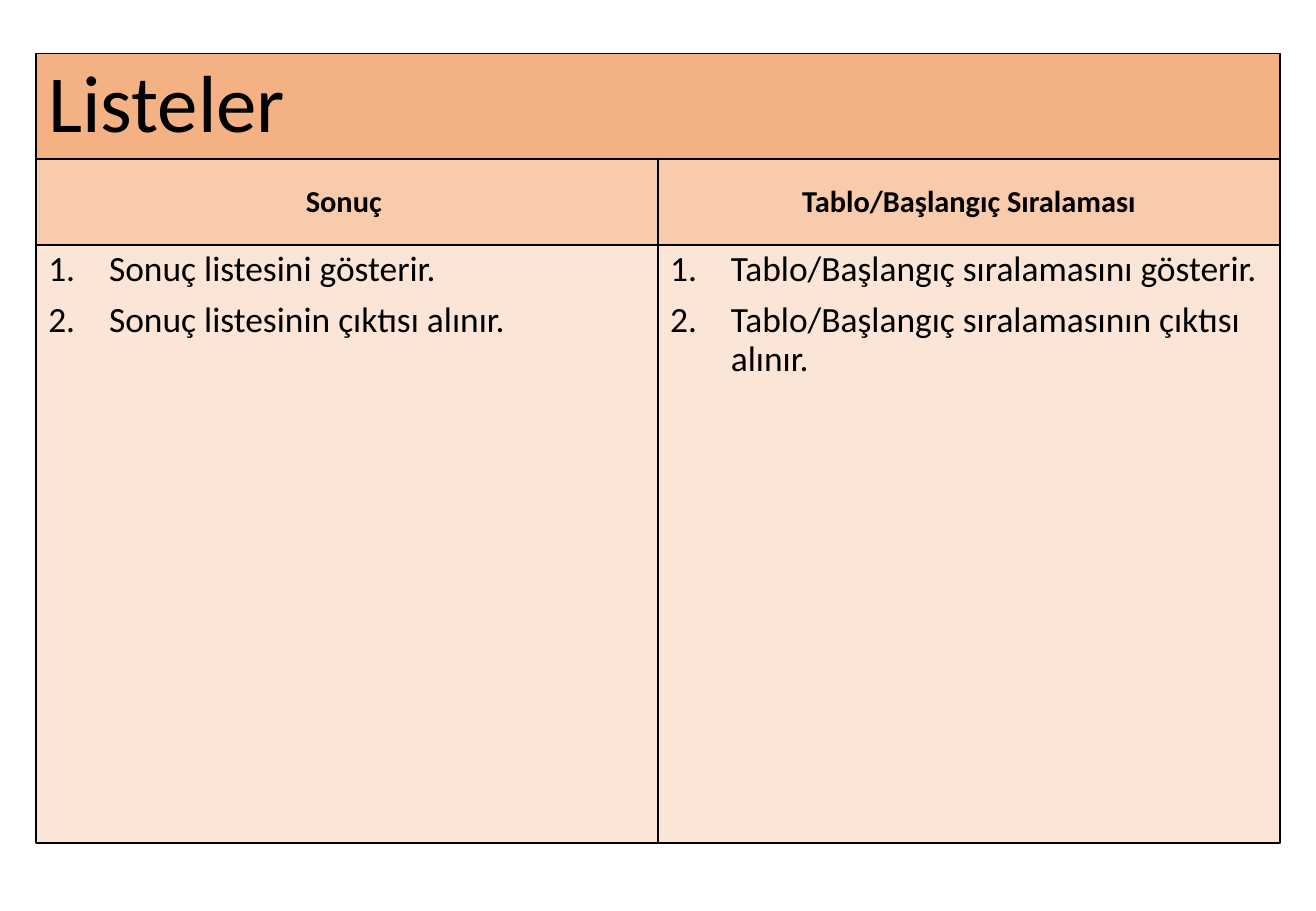
from dataclasses import dataclass

from lxml.etree import SubElement
from pptx import Presentation
from pptx.dml.color import RGBColor
from pptx.enum.shapes import MSO_SHAPE
from pptx.enum.text import MSO_ANCHOR, PP_ALIGN
from pptx.oxml.ns import qn
from pptx.util import Cm, Pt

TITLE = "Listeler"
COLUMNS = [
    ("Sonuç ", ["Sonuç listesini gösterir.", "Sonuç listesinin çıktısı alınır."]),
    (
        "Tablo/Başlangıç Sıralaması",
        [
            "Tablo/Başlangıç sıralamasını gösterir.",
            "Tablo/Başlangıç sıralamasının çıktısı alınır.",
        ],
    ),
]


@dataclass(frozen=True)
class Theme:
    font: str = "Calibri"
    ink: str = "000000"
    title_fill: str = "F4B183"
    heading_fill: str = "F8CBAD"
    list_fill: str = "FBE5D6"
    title_size: int = 48
    heading_size: int = 18
    list_size: int = 21
    paragraph_gap: float = 7.5


THEME = Theme()
LEFT, TOP = Cm(0.76), Cm(1.12)
COLUMN_WIDTH = Cm(13)
TITLE_HEIGHT, HEADING_HEIGHT, LIST_HEIGHT = Cm(2.21), Cm(1.8), Cm(12.5)
NUMBER_INDENT = Cm(1.27)


def number_paragraph(para):
    properties = para._p.get_or_add_pPr()
    properties.set("marL", str(NUMBER_INDENT))
    properties.set("indent", str(-NUMBER_INDENT))
    SubElement(properties, qn("a:buFont"), typeface=THEME.font)
    SubElement(properties, qn("a:buAutoNum"), type="arabicPeriod")


def write_text(box, lines, *, size, bold=False, align=PP_ALIGN.LEFT,
               anchor=MSO_ANCHOR.MIDDLE, gap=0, numbered=False):
    frame = box.text_frame
    frame.word_wrap = True
    frame.vertical_anchor = anchor
    for index, line in enumerate(lines):
        para = frame.add_paragraph() if index else frame.paragraphs[0]
        para.alignment = align
        para.line_spacing = 0.9
        para.space_before = Pt(gap)
        if numbered:
            number_paragraph(para)
        span = para.add_run()
        span.text = line
        span.font.name = THEME.font
        span.font.size = Pt(size)
        span.font.bold = bold
        span.font.color.rgb = RGBColor.from_string(THEME.ink)


def add_panel(page, left, top, width, height, fill):
    box = page.shapes.add_shape(MSO_SHAPE.RECTANGLE, left, top, width, height)
    box.shadow.inherit = False
    box.fill.solid()
    box.fill.fore_color.rgb = RGBColor.from_string(fill)
    box.line.color.rgb = RGBColor.from_string(THEME.ink)
    box.line.width = Pt(1)
    return box


def main():
    deck = Presentation()
    deck.slide_width, deck.slide_height = Cm(27.51), Cm(19.05)
    page = deck.slides.add_slide(deck.slide_layouts[6])

    title = add_panel(page, LEFT, TOP, COLUMN_WIDTH * len(COLUMNS), TITLE_HEIGHT,
                      THEME.title_fill)
    write_text(title, [TITLE], size=THEME.title_size)

    heading_top = TOP + TITLE_HEIGHT
    list_top = heading_top + HEADING_HEIGHT
    for index, (heading, items) in enumerate(COLUMNS):
        left = LEFT + index * COLUMN_WIDTH
        heading_box = add_panel(page, left, heading_top, COLUMN_WIDTH, HEADING_HEIGHT,
                                THEME.heading_fill)
        write_text(heading_box, [heading], size=THEME.heading_size, bold=True,
                   align=PP_ALIGN.CENTER, gap=THEME.paragraph_gap)
        list_box = add_panel(page, left, list_top, COLUMN_WIDTH, LIST_HEIGHT,
                             THEME.list_fill)
        write_text(list_box, items, size=THEME.list_size, anchor=MSO_ANCHOR.TOP,
                   gap=THEME.paragraph_gap, numbered=True)

    deck.save("out.pptx")


if __name__ == "__main__":
    main()
